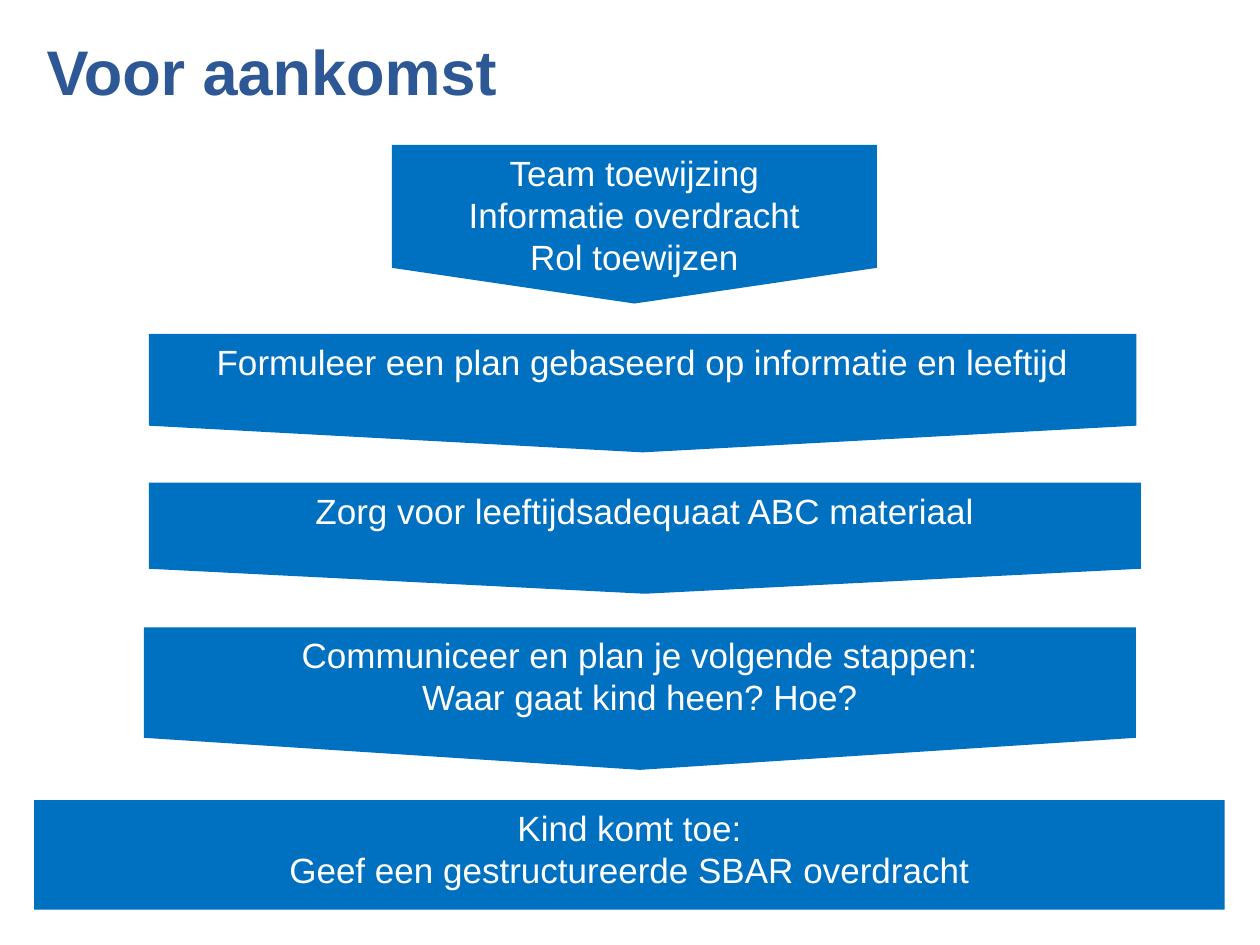
from pptx import Presentation
from pptx.dml.color import RGBColor
from pptx.enum.shapes import MSO_SHAPE
from pptx.enum.text import MSO_ANCHOR, PP_ALIGN
from pptx.util import Cm, Pt

RECTANGLE = MSO_SHAPE.RECTANGLE
TOP = MSO_ANCHOR.TOP
LEFT, CENTER = PP_ALIGN.LEFT, PP_ALIGN.CENTER

FONT = "Arial"
BLUE, TITLE_BLUE, WHITE = "0070C0", "2E5796", "FFFFFF"
SHOULDER = 0.775  # share of an arrow's height above its point
INSET = 0.13

# left, top, width, height, text height (cm), lines
ARROW_STEPS = [
    (7.9, 2.92, 9.78, 3.2, 3.53,
     ["Team toewijzing", "Informatie overdracht", "Rol toewijzen"]),
    (3, 6.73, 19.91, 2.39, 1.9,
     ["Formuleer een plan gebaseerd op informatie en leeftijd"]),
    (3, 9.73, 20, 2.24, 1.04,
     ["Zorg voor leeftijdsadequaat ABC materiaal"]),
    (2.9, 12.65, 20, 2.87, 1.85,
     ["Communiceer en plan je volgende stappen:", "Waar gaat kind heen? Hoe?"]),
]
FINAL_STEP = (0.69, 16.13, 24, 2.21, 1.96,
              ["Kind komt toe:", "Geef een gestructureerde SBAR overdracht"])


def color(value):
    return RGBColor.from_string(value)


def paint(shape):
    shape.shadow.inherit = False
    shape.fill.solid()
    shape.fill.fore_color.rgb = color(BLUE)
    shape.line.fill.background()


def add_text(shapes, left, top, width, height, lines, size, ink,
             align=CENTER, bold=False, inset=INSET):
    box = shapes.add_textbox(Cm(left), Cm(top), Cm(width), Cm(height))
    frame = box.text_frame
    frame.word_wrap = True
    frame.vertical_anchor = TOP
    frame.margin_left = frame.margin_right = Cm(inset)
    frame.margin_top = frame.margin_bottom = Cm(INSET)
    frame.text = "\n".join(lines)
    for para in frame.paragraphs:
        para.alignment = align
        para.font.name = FONT
        para.font.size = Pt(size)
        para.font.bold = bold
        para.font.color.rgb = color(ink)


def add_arrow(shapes, left, top, width, height):
    right, shoulder = left + width, top + height * SHOULDER
    outline = shapes.build_freeform(Cm(left), Cm(top))
    corners = [(right, top), (right, shoulder),
               (left + width / 2, top + height), (left, shoulder)]
    outline.add_line_segments([(Cm(x), Cm(y)) for x, y in corners], close=True)
    paint(outline.convert_to_shape())


def add_bar(shapes, left, top, width, height):
    paint(shapes.add_shape(RECTANGLE, Cm(left), Cm(top), Cm(width), Cm(height)))


def add_step(slide, add_background, step):
    left, top, width, height, text_height, lines = step
    shapes = slide.shapes.add_group_shape().shapes
    add_background(shapes, left, top, width, height)
    add_text(shapes, left + INSET, top, width - 2 * INSET, text_height,
             lines, 20, WHITE)


def main():
    deck = Presentation()
    deck.slide_width, deck.slide_height = Cm(25.4), Cm(19.05)
    slide = deck.slides.add_slide(deck.slide_layouts[6])

    # Title
    add_text(slide.shapes, 0.69, 0.53, 22.86, 3.18, ["Voor aankomst"],
             36, TITLE_BLUE, align=LEFT, bold=True, inset=0.25)

    # Steps leading down to the arrival
    for step in ARROW_STEPS:
        add_step(slide, add_arrow, step)
    add_step(slide, add_bar, FINAL_STEP)

    deck.save("out.pptx")


if __name__ == "__main__":
    main()
